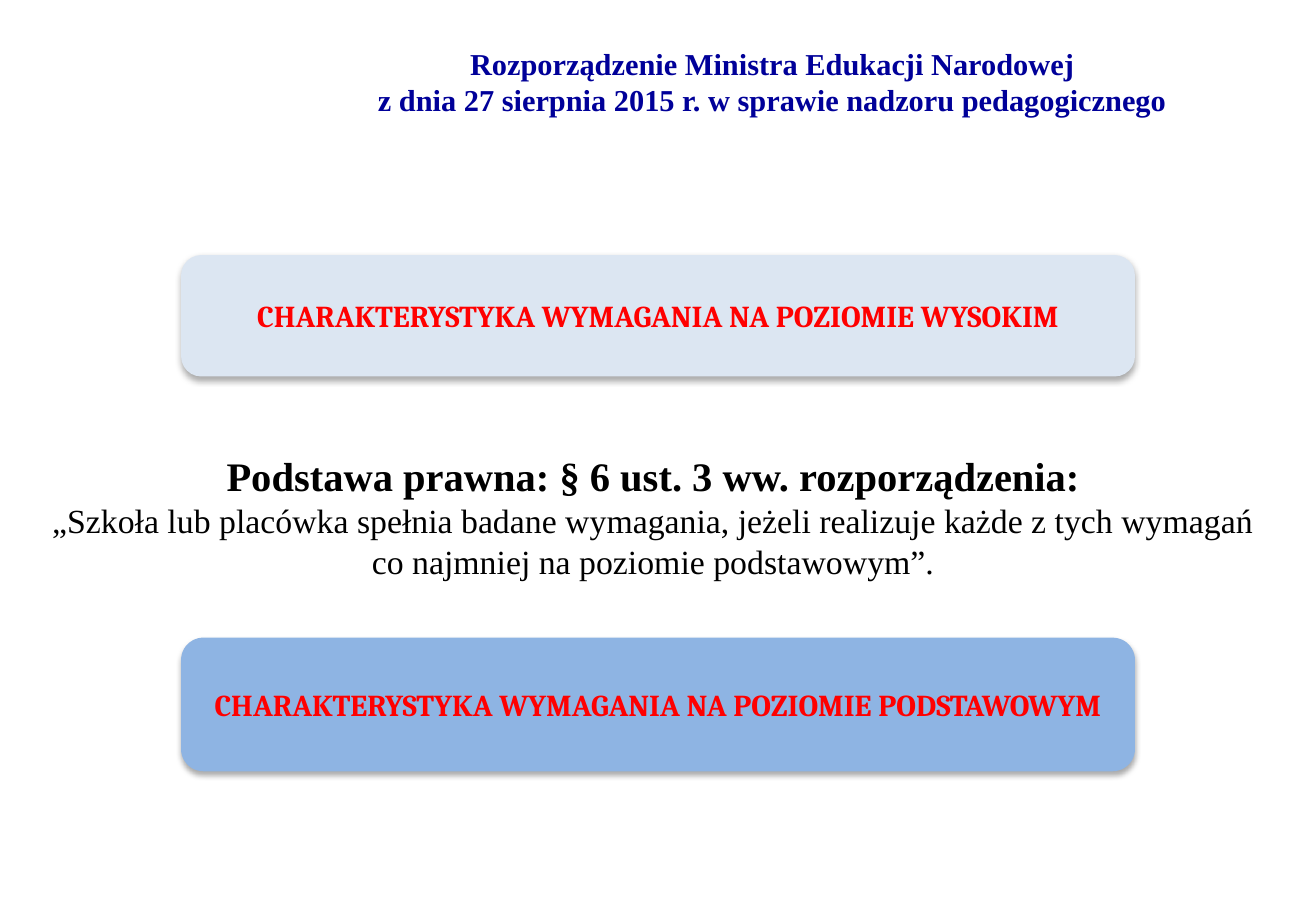
from dataclasses import dataclass

from lxml.etree import SubElement
from pptx import Presentation
from pptx.dml.color import RGBColor
from pptx.enum.shapes import MSO_SHAPE
from pptx.enum.text import MSO_ANCHOR, PP_ALIGN
from pptx.oxml.ns import qn
from pptx.shapes.autoshape import Shape
from pptx.slide import Slide
from pptx.util import Emu, Pt

PX = 9144  # one px is a hundredth of an inch

NAVY = RGBColor(0x00, 0x00, 0x99)
RED = RGBColor(0xFF, 0x00, 0x00)
BLACK = RGBColor(0x00, 0x00, 0x00)
PALE_BLUE = RGBColor(0xDC, 0xE6, 0xF2)
MID_BLUE = RGBColor(0x8E, 0xB4, 0xE3)


@dataclass(frozen=True)
class Box:
    left: int
    top: int
    width: int
    height: int

    def emu(self) -> list[Emu]:
        return [Emu(px * PX) for px in (self.left, self.top, self.width, self.height)]


@dataclass(frozen=True)
class Line:
    text: str
    size: int
    bold: bool = True


@dataclass(frozen=True)
class TextBlock:
    box: Box
    lines: list[Line]
    color: RGBColor


@dataclass(frozen=True)
class LevelPanel:
    top: int
    height: int
    fill: RGBColor
    level: str


TEXT_BLOCKS = [
    # Heading with the name of the regulation
    TextBlock(Box(208, 16, 855, 102), [
        Line("Rozporządzenie Ministra Edukacji Narodowej", 18),
        Line("z dnia 27 sierpnia 2015 r. w sprawie nadzoru pedagogicznego", 18),
    ], NAVY),
    # Legal basis
    TextBlock(Box(13, 369, 1049, 112), [
        Line("Podstawa prawna: § 6 ust. 3 ww. rozporządzenia:", 24),
        Line("„Szkoła lub placówka spełnia badane wymagania, jeżeli realizuje każde z tych wymagań",
             20, False),
        Line("co najmniej na poziomie podstawowym”.", 20, False),
    ], BLACK),
]

LEVEL_PANELS = [
    LevelPanel(210, 100, PALE_BLUE, "WYSOKIM"),
    LevelPanel(525, 110, MID_BLUE, "PODSTAWOWYM"),
]


def write_lines(shape: Shape, lines: list[Line], font_name: str, color: RGBColor) -> None:
    """Write centred lines as one paragraph with line breaks."""
    frame = shape.text_frame
    frame.word_wrap = True
    frame.vertical_anchor = MSO_ANCHOR.MIDDLE
    paragraph = frame.paragraphs[0]
    paragraph.alignment = PP_ALIGN.CENTER
    for index, line in enumerate(lines):
        if index:
            paragraph.add_line_break()
        run = paragraph.add_run()
        run.text = line.text
        font_format = {"name": font_name, "size": Pt(line.size), "bold": line.bold}
        for attribute, value in font_format.items():
            setattr(run.font, attribute, value)
        run.font.color.rgb = color


def add_soft_shadow(shape: Shape) -> None:
    """Give the shape a blurred shadow that falls straight down."""
    shape.shadow.inherit = False
    effects = shape._element.spPr.find(qn("a:effectLst"))
    shadow = SubElement(effects, qn("a:outerShdw"), {
        "blurRad": str(Pt(3.5)), "dist": str(Pt(2.2)), "dir": "5400000", "rotWithShape": "0",
    })
    color = SubElement(shadow, qn("a:srgbClr"), val=str(BLACK))
    SubElement(color, qn("a:alpha"), val="32000")


def add_text_block(slide: Slide, block: TextBlock) -> None:
    shape = slide.shapes.add_textbox(*block.box.emu())
    write_lines(shape, block.lines, "Times New Roman", block.color)


def add_level_panel(slide: Slide, panel: LevelPanel) -> None:
    box = Box(149, panel.top, 785, panel.height)
    shape = slide.shapes.add_shape(MSO_SHAPE.ROUNDED_RECTANGLE, *box.emu())
    shape.fill.solid()
    shape.fill.fore_color.rgb = panel.fill
    shape.line.fill.background()
    add_soft_shadow(shape)
    text = f"CHARAKTERYSTYKA WYMAGANIA NA POZIOMIE {panel.level}"
    write_lines(shape, [Line(text, 18)], "Cambria", RED)


def main() -> None:
    presentation = Presentation()
    presentation.slide_width = Emu(1083 * PX)
    presentation.slide_height = Emu(750 * PX)
    slide = presentation.slides.add_slide(presentation.slide_layouts[6])
    for block in TEXT_BLOCKS:
        add_text_block(slide, block)
    for panel in LEVEL_PANELS:
        add_level_panel(slide, panel)
    presentation.save("out.pptx")


if __name__ == "__main__":
    main()
